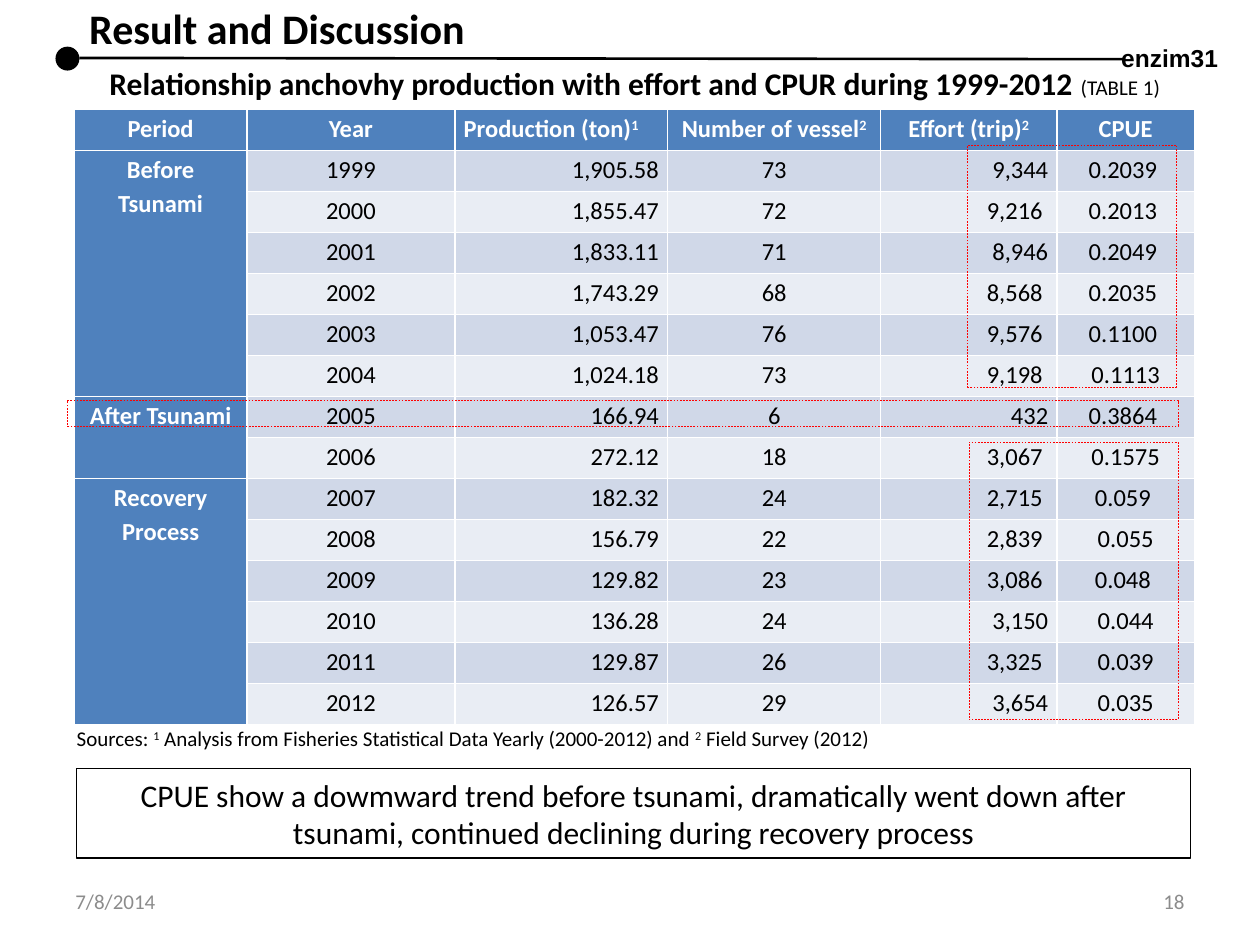
"""Build the slide on anchovy production, effort and CPUE around the tsunami."""

from dataclasses import dataclass
from typing import NamedTuple, Optional

from lxml.etree import SubElement
from pptx import Presentation
from pptx.dml.color import RGBColor
from pptx.enum.dml import MSO_LINE
from pptx.enum.shapes import MSO_CONNECTOR, MSO_SHAPE
from pptx.enum.text import MSO_ANCHOR, PP_ALIGN
from pptx.oxml.ns import qn
from pptx.util import Inches, Pt


@dataclass(frozen=True)
class Theme:
    font: str = "Calibri"
    label_font: str = "Arial"
    black: str = "000000"
    white: str = "FFFFFF"
    grey: str = "8C8C8C"
    red: str = "FF0000"
    header: str = "4F81BD"
    bands: tuple = ("D0D8E8", "E9EDF4")
    title: int = 24
    subtitle: int = 18
    body: int = 14
    small: int = 12
    hairline: float = 0.25
    thin: float = 0.75
    rule: float = 1.5


class Box(NamedTuple):
    left: float
    top: float
    width: float
    height: float

    def lengths(self) -> tuple:
        return tuple(Inches(value) for value in self)


class Piece(NamedTuple):
    text: str
    size: int
    bold: bool = False
    color: str = "000000"
    font: str = "Calibri"
    superscript: bool = False


class TextItem(NamedTuple):
    box: Box
    pieces: tuple
    align: PP_ALIGN = PP_ALIGN.LEFT
    wrap: bool = False
    anchor: MSO_ANCHOR = MSO_ANCHOR.TOP


class Period(NamedTuple):
    name: str
    rows: tuple


THEME = Theme()
LEFT, CENTER, RIGHT = PP_ALIGN.LEFT, PP_ALIGN.CENTER, PP_ALIGN.RIGHT

TABLE_BOX = Box(0.59, 0.87, 8.9, 4.88)
COLUMN_WIDTHS = (1.37, 1.65, 1.69, 1.69, 1.4, 1.09)
COLUMN_ALIGNS = (CENTER, CENTER, RIGHT, CENTER, RIGHT, CENTER)
HEADERS = (
    ("Period", "", CENTER),
    ("Year", "", CENTER),
    ("Production (ton)", "1", PP_ALIGN.JUSTIFY),
    ("Number of vessel", "2", CENTER),
    ("Effort (trip)", "2", CENTER),
    ("CPUE", "", CENTER),
)
PERIODS = (
    Period("Before Tsunami", (
        ("1999", "1,905.58", "73", "9,344", "0.2039 "),
        ("2000", "1,855.47", "72", "9,216 ", "0.2013 "),
        ("2001", "1,833.11", "71", "8,946", "0.2049 "),
        ("2002", "1,743.29", "68", "8,568 ", "0.2035 "),
        ("2003", "1,053.47", "76", "9,576 ", "0.1100 "),
        ("2004", "1,024.18", "73", "9,198 ", "0.1113"),
    )),
    Period("After Tsunami", (
        ("2005", "166.94", "6", "432", "0.3864 "),
        ("2006", "272.12", "18", "3,067 ", "0.1575"),
    )),
    Period("Recovery Process", (
        ("2007", "182.32", "24", "2,715 ", "0.059 "),
        ("2008", "156.79", "22", "2,839 ", "0.055"),
        ("2009", "129.82", "23", "3,086 ", "0.048 "),
        ("2010", "136.28", "24", "3,150", "0.044"),
        ("2011", "129.87", "26", "3,325 ", "0.039"),
        ("2012", "126.57", "29", "3,654", "0.035"),
    )),
)

FOOTERS = (
    TextItem(Box(0.5, 6.95, 2.33, 0.4), (Piece("7/8/2014", THEME.small, color=THEME.grey),),
             wrap=True, anchor=MSO_ANCHOR.MIDDLE),
    TextItem(Box(7.17, 6.95, 2.33, 0.4), (Piece("18", THEME.small, color=THEME.grey),),
             RIGHT, wrap=True, anchor=MSO_ANCHOR.MIDDLE),
)
SOURCES = TextItem(Box(0.51, 5.71, 8.82, 0.3), (
    Piece("Sources: ", THEME.small),
    Piece("1", THEME.small, superscript=True),
    Piece(" Analysis from Fisheries Statistical Data Yearly (2000-2012) and ", THEME.small),
    Piece("2", THEME.small, superscript=True),
    Piece(" Field Survey (2012)", THEME.small),
), wrap=True)
AUTHOR = TextItem(Box(8.8, 0.29, 0.98, 0.34),
                  (Piece("enzim31", THEME.body, True, font=THEME.label_font),))
HEADINGS = (
    TextItem(Box(0.61, -0.03, 3.29, 0.5), (Piece("Result and Discussion", THEME.title, True),)),
    TextItem(Box(0.77, 0.46, 8.88, 0.4), (
        Piece("Relationship anchovhy production with effort and CPUR during 1999-2012 ",
              THEME.subtitle, True),
        Piece("(TABLE 1)", THEME.small),
    )),
)
CONCLUSION_BOX = Box(0.61, 6.1, 8.84, 0.71)
CONCLUSION = Piece("CPUE show a dowmward trend before tsunami, dramatically went down after "
                   "tsunami, continued declining during recovery process", THEME.subtitle)
HIGHLIGHTS = (Box(0.53, 3.18, 8.82, 0.2), Box(7.68, 1.15, 1.66, 1.92), Box(7.69, 3.51, 1.66, 2.2))


def write(paragraph, pieces: tuple, align: PP_ALIGN) -> None:
    paragraph.alignment = align
    for piece in pieces:
        run = paragraph.add_run()
        run.text = piece.text
        run.font.name = piece.font
        run.font.size = Pt(piece.size)
        run.font.bold = piece.bold
        run.font.color.rgb = RGBColor.from_string(piece.color)
        if piece.superscript:
            run._r.get_or_add_rPr().set("baseline", "30000")


def add_text(shapes, item: TextItem) -> None:
    text_frame = shapes.add_textbox(*item.box.lengths()).text_frame
    text_frame.word_wrap = item.wrap
    text_frame.vertical_anchor = item.anchor
    write(text_frame.paragraphs[0], item.pieces, item.align)


def add_frame(shapes, box: Box, color: str, width: float, dash: Optional[MSO_LINE] = None):
    shape = shapes.add_shape(MSO_SHAPE.RECTANGLE, *box.lengths())
    shape.shadow.inherit = False
    shape.fill.background()
    shape.line.color.rgb = RGBColor.from_string(color)
    shape.line.width = Pt(width)
    if dash is not None:
        shape.line.dash_style = dash
    return shape


def fill_cell(cell, pieces: tuple, align: PP_ALIGN, color: str) -> None:
    cell.fill.solid()
    cell.fill.fore_color.rgb = RGBColor.from_string(color)
    paragraph = cell.text_frame.paragraphs[0]
    paragraph.line_spacing = 1.15
    write(paragraph, pieces, align)


def add_data_table(shapes) -> None:
    row_count = 1 + sum(len(period.rows) for period in PERIODS)
    table = shapes.add_table(row_count, len(COLUMN_WIDTHS), *TABLE_BOX.lengths()).table
    table.first_col = True
    for column, width in zip(table.columns, COLUMN_WIDTHS):
        column.width = Inches(width)
    for cell in table.iter_cells():
        cell.margin_left = cell.margin_right = Inches(0.07)
        cell.margin_top = cell.margin_bottom = 0
    for index, (label, note, align) in enumerate(HEADERS):
        pieces = [Piece(label, THEME.body, True, THEME.white)]
        if note:
            pieces.append(Piece(note, THEME.body, True, THEME.white, superscript=True))
        fill_cell(table.cell(0, index), tuple(pieces), align, THEME.header)
    first = 1
    for period in PERIODS:
        name_cell = table.cell(first, 0)
        name_cell.merge(table.cell(first + len(period.rows) - 1, 0))
        fill_cell(name_cell, (Piece(period.name, THEME.body, True, THEME.white),),
                  CENTER, THEME.header)
        for row, values in enumerate(period.rows, first):
            for column, value in enumerate(values, 1):
                fill_cell(table.cell(row, column), (Piece(value, THEME.body),),
                          COLUMN_ALIGNS[column], THEME.bands[(row - 1) % 2])
        first += len(period.rows)


def add_title_rule(shapes) -> None:
    group = shapes.add_group_shape().shapes
    line = group.add_connector(MSO_CONNECTOR.STRAIGHT, Inches(0.63), Inches(0.46),
                               Inches(8.93), Inches(0.47))
    line.line.color.rgb = RGBColor.from_string(THEME.black)
    line.line.width = Pt(THEME.rule)
    SubElement(line._element.spPr, qn("a:effectLst"))
    dot = group.add_shape(MSO_SHAPE.OVAL, *Box(0.44, 0.37, 0.19, 0.19).lengths())
    dot.shadow.inherit = False
    dot.fill.solid()
    dot.fill.fore_color.rgb = RGBColor.from_string(THEME.black)
    dot.line.fill.background()
    add_text(group, AUTHOR)


def main() -> None:
    presentation = Presentation()
    presentation.slide_width, presentation.slide_height = Inches(10), Inches(7.5)
    shapes = presentation.slides.add_slide(presentation.slide_layouts[6]).shapes
    for footer in FOOTERS:
        add_text(shapes, footer)
    add_data_table(shapes)
    add_text(shapes, SOURCES)
    add_title_rule(shapes)
    for heading in HEADINGS:
        add_text(shapes, heading)
    conclusion = add_frame(shapes, CONCLUSION_BOX, THEME.black, THEME.thin)
    conclusion.text_frame.word_wrap = True
    write(conclusion.text_frame.paragraphs[0], (CONCLUSION,), CENTER)
    for box in HIGHLIGHTS:
        add_frame(shapes, box, THEME.red, THEME.hairline, MSO_LINE.DASH)
    presentation.save("out.pptx")


if __name__ == "__main__":
    main()
